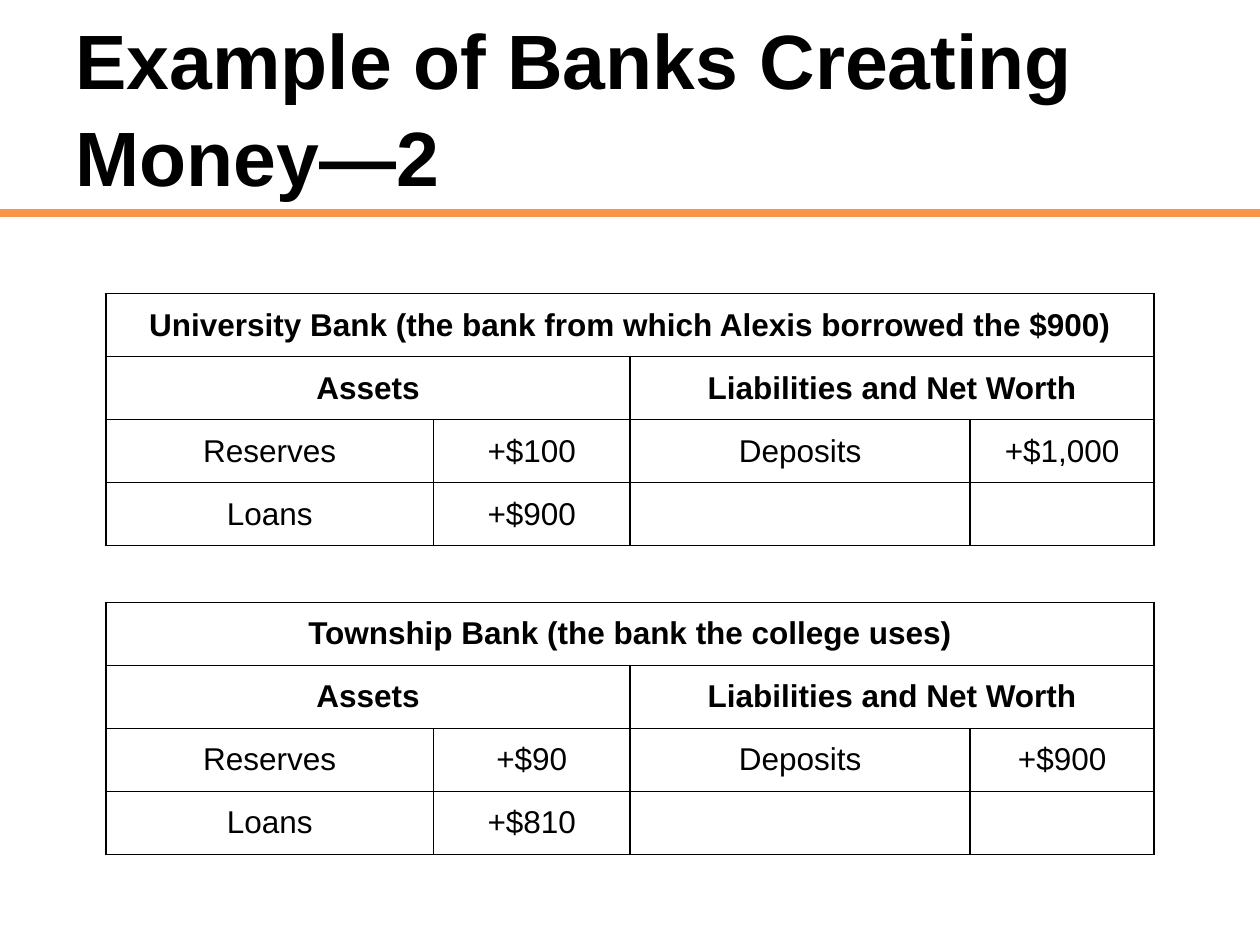
from dataclasses import dataclass

from lxml import etree
from pptx import Presentation
from pptx.dml.color import RGBColor
from pptx.enum.shapes import MSO_CONNECTOR
from pptx.enum.text import MSO_ANCHOR, MSO_AUTO_SIZE, PP_ALIGN
from pptx.oxml import parse_xml
from pptx.oxml.ns import nsdecls, qn
from pptx.util import Inches, Pt

STRAIGHT = MSO_CONNECTOR.STRAIGHT
MIDDLE = MSO_ANCHOR.MIDDLE
LEFT, CENTER = PP_ALIGN.LEFT, PP_ALIGN.CENTER
NO_AUTOFIT = MSO_AUTO_SIZE.NONE

FONT = "Arial"
COLORS = {"text": "000000", "border": "000000", "rule": "F79646"}
COLUMN_WIDTHS = (2.6, 1.56, 2.7, 1.46)
ROW_HEIGHT = 0.5
TABLE_LEFT = 0.84
HEADER_ROWS = 2


@dataclass
class BalanceSheet:
    top: float
    bank: str
    reserves: str
    loans: str
    deposits: str

    def rows(self) -> list[tuple[str, ...]]:
        return [
            (self.bank, "", "", ""),
            ("Assets", "", "Liabilities and Net Worth", ""),
            ("Reserves", self.reserves, "Deposits", self.deposits),
            ("Loans", self.loans, "", ""),
        ]


SHEETS = (
    BalanceSheet(2.33, "University Bank (the bank from which Alexis borrowed the $900)",
                 "+$100", "+$900", "+$1,000"),
    BalanceSheet(4.78, "Township Bank (the bank the college uses)",
                 "+$90", "+$810", "+$900"),
)


def format_paragraph(p, size: float, bold: bool, align) -> None:
    p.alignment = align
    p.font.name = FONT
    p.font.size = Pt(size)
    p.font.bold = bold
    p.font.color.rgb = RGBColor.from_string(COLORS["text"])


def add_borders(cell, width: float = 1) -> None:
    tc_pr = cell._tc.get_or_add_tcPr()
    for side in ("lnL", "lnR", "lnT", "lnB"):
        tc_pr.append(parse_xml(
            f'<a:{side} {nsdecls("a")} w="{Pt(width)}"><a:solidFill>'
            f'<a:srgbClr val="{COLORS["border"]}"/></a:solidFill></a:{side}>'))


def add_title(slide, text: str) -> None:
    title = slide.shapes.title
    title.left, title.top = Inches(0.5), Inches(0)
    title.width, title.height = Inches(9), Inches(1.67)
    tf = title.text_frame
    tf.text = text
    tf.word_wrap = True
    tf.auto_size = NO_AUTOFIT
    tf.vertical_anchor = MIDDLE
    p = tf.paragraphs[0]
    p.line_spacing = 1.05
    format_paragraph(p, 44, True, LEFT)


def add_rule(slide, y: float) -> None:
    line = slide.shapes.add_connector(STRAIGHT, Inches(0), Inches(y), Inches(10), Inches(y))
    line.line.color.rgb = RGBColor.from_string(COLORS["rule"])
    line.line.width = Pt(4.5)
    etree.SubElement(line._element.spPr, qn("a:effectLst"))


def add_balance_sheet(slide, sheet: BalanceSheet) -> None:
    rows = sheet.rows()
    table = slide.shapes.add_table(
        len(rows), len(COLUMN_WIDTHS), Inches(TABLE_LEFT), Inches(sheet.top),
        Inches(sum(COLUMN_WIDTHS)), Inches(ROW_HEIGHT * len(rows))).table
    table.first_row = table.horz_banding = False
    for column, width in zip(table.columns, COLUMN_WIDTHS):
        column.width = Inches(width)

    for r, values in enumerate(rows):
        table.rows[r].height = Inches(ROW_HEIGHT)
        for c, value in enumerate(values):
            cell = table.cell(r, c)
            cell.text = value
            cell.vertical_anchor = MIDDLE
            cell.margin_left = cell.margin_right = Inches(0.07)
            cell.margin_top = cell.margin_bottom = 0
            format_paragraph(cell.text_frame.paragraphs[0], 18, r < HEADER_ROWS, CENTER)
            add_borders(cell)
            cell.fill.background()

    # Bank name spans the table, each side heading spans two columns
    for r, first, last in ((0, 0, 3), (1, 0, 1), (1, 2, 3)):
        table.cell(r, first).merge(table.cell(r, last))


def main() -> None:
    prs = Presentation()
    prs.slide_width, prs.slide_height = Inches(10), Inches(7.5)
    slide = prs.slides.add_slide(prs.slide_layouts[5])

    # Heading
    add_rule(slide, 1.69)
    add_title(slide, "Example of Banks Creating Money—2")

    # Balance sheets
    for sheet in SHEETS:
        add_balance_sheet(slide, sheet)

    prs.save("out.pptx")


if __name__ == "__main__":
    main()
